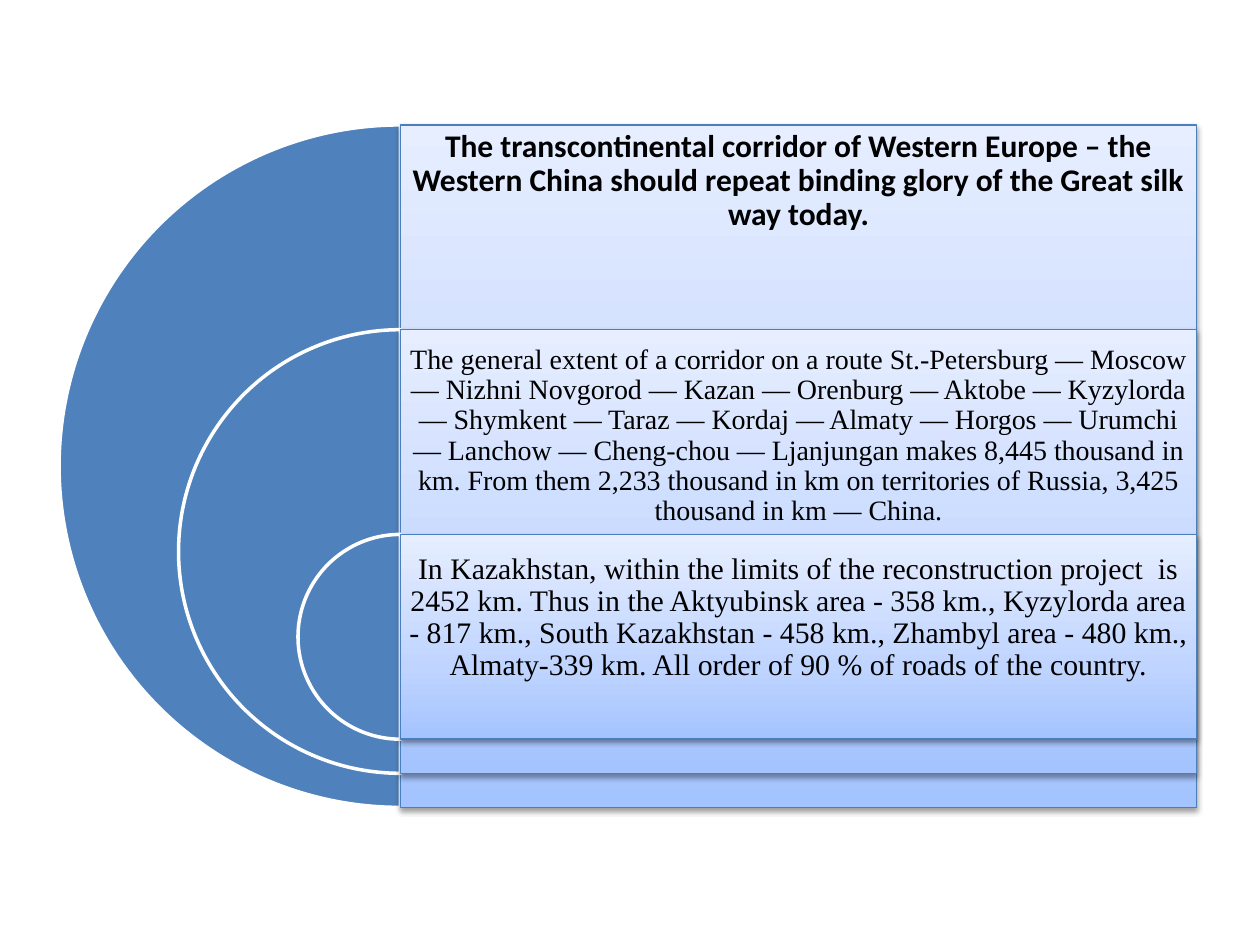
from copy import deepcopy
from dataclasses import dataclass

from lxml import etree
from pptx import Presentation
from pptx.dml.color import RGBColor
from pptx.enum.shapes import MSO_SHAPE
from pptx.enum.text import MSO_ANCHOR, PP_ALIGN
from pptx.oxml.ns import qn
from pptx.util import Pt

PIE, RECT = MSO_SHAPE.PIE, MSO_SHAPE.RECTANGLE
TOP, CENTER = MSO_ANCHOR.TOP, PP_ALIGN.CENTER


@dataclass(frozen=True)
class Theme:
    pie: str = "4F81BD"
    pie_line: str = "FFFFFF"
    panel_line: str = "4B7EBC"
    panel_stops: tuple = ((0, "A4C4FF"), (0.35, "BFD4FF"), (1, "E6EEFF"))
    text: str = "000000"
    shadow: str = "000000"
    heading_font: str = "Calibri"
    body_font: str = "Times New Roman"
    heading_size: int = 18
    route_size: int = 16
    project_size: int = 17


class SlideBuilder:
    def __init__(self, slide, theme):
        self.slide = slide
        self.theme = theme

    def shape(self, kind, x, y, w, h, line, line_width):
        sp = self.slide.shapes.add_shape(kind, Pt(x), Pt(y), Pt(w), Pt(h))
        sp.shadow.inherit = False
        sp.line.color.rgb = RGBColor.from_string(line)
        sp.line.width = Pt(line_width)
        return sp

    def half_disc(self, center_x, y, diameter):
        """Add the left half of a circle as a pie."""
        sp = self.shape(PIE, center_x - diameter / 2, y, diameter, diameter,
                        self.theme.pie_line, 2)
        sp.adjustments[0], sp.adjustments[1] = 54, 162
        sp.fill.solid()
        sp.fill.fore_color.rgb = RGBColor.from_string(self.theme.pie)

    def panel(self, x, y, w, h):
        """Add a rectangle with a vertical gradient and a soft shadow."""
        sp = self.shape(RECT, x, y, w, h, self.theme.panel_line, 0.75)
        sp.fill.gradient()
        sp.fill.gradient_angle = 90
        spPr = sp._element.spPr
        first = spPr.find(".//" + qn("a:gs"))
        first.addnext(deepcopy(first))
        for stop, (position, color) in zip(sp.fill.gradient_stops, self.theme.panel_stops):
            stop.position = position
            stop.color.rgb = RGBColor.from_string(color)
        shadow = etree.SubElement(
            spPr.find(qn("a:effectLst")), qn("a:outerShdw"), blurRad=str(Pt(3.1)),
            dist=str(Pt(1.6)), dir="5400000", rotWithShape="0")
        color = etree.SubElement(shadow, qn("a:srgbClr"), val=self.theme.shadow)
        etree.SubElement(color, qn("a:alpha"), val="38000")

    def text(self, x, y, w, h, text, font, size, bold, top_inset):
        box = self.slide.shapes.add_textbox(Pt(x), Pt(y), Pt(w), Pt(h))
        tf = box.text_frame
        tf.word_wrap = True
        tf.vertical_anchor = TOP
        tf.margin_left = tf.margin_right = tf.margin_bottom = Pt(5)
        tf.margin_top = Pt(top_inset)
        p = tf.paragraphs[0]
        p.text = text
        p.alignment = CENTER
        p.line_spacing = 0.9
        p.font.name = font
        p.font.size = Pt(size)
        p.font.bold = bold
        p.font.color.rgb = RGBColor.from_string(self.theme.text)


def main():
    theme = Theme()
    prs = Presentation()
    prs.slide_width, prs.slide_height = Pt(720), Pt(540)
    builder = SlideBuilder(prs.slides.add_slide(prs.slide_layouts[6]), theme)

    # text, font, size, bold, top inset
    sections = (
        ("The transcontinental corridor of Western Europe – the Western China should "
         "repeat binding glory of the Great silk way today.",
         theme.heading_font, theme.heading_size, True, 3),
        ("The general extent of a corridor on a route St.-Petersburg — Moscow — Nizhni "
         "Novgorod — Kazan — Orenburg — Aktobe — Kyzylorda — Shymkent — Taraz — Kordaj — "
         "Almaty — Horgos — Urumchi — Lanchow — Cheng-chou — Ljanjungan makes 8,445 "
         "thousand in km. From them 2,233 thousand in km on territories of Russia, 3,425 "
         "thousand in km — China.",
         theme.body_font, theme.route_size, False, 9),
        ("In Kazakhstan, within the limits of the reconstruction project  is 2452 km. "
         "Thus in the Aktyubinsk area - 358 km., Kyzylorda area - 817 km., South "
         "Kazakhstan - 458 km., Zhambyl area - 480 km., Almaty-339 km. All order of 90 % "
         "of roads of the country.",
         theme.body_font, theme.project_size, False, 11),
    )
    left, top, width = 228.8, 71.4, 455
    outer, shrink = 390, 136.5
    row = outer * 0.3
    for i, section in enumerate(sections):
        y = top + i * row
        height = outer - i * shrink
        builder.half_disc(left, y, height)
        builder.panel(left, y, width, height)
        builder.text(left, y, width, row, *section)

    prs.save("out.pptx")


if __name__ == "__main__":
    main()
